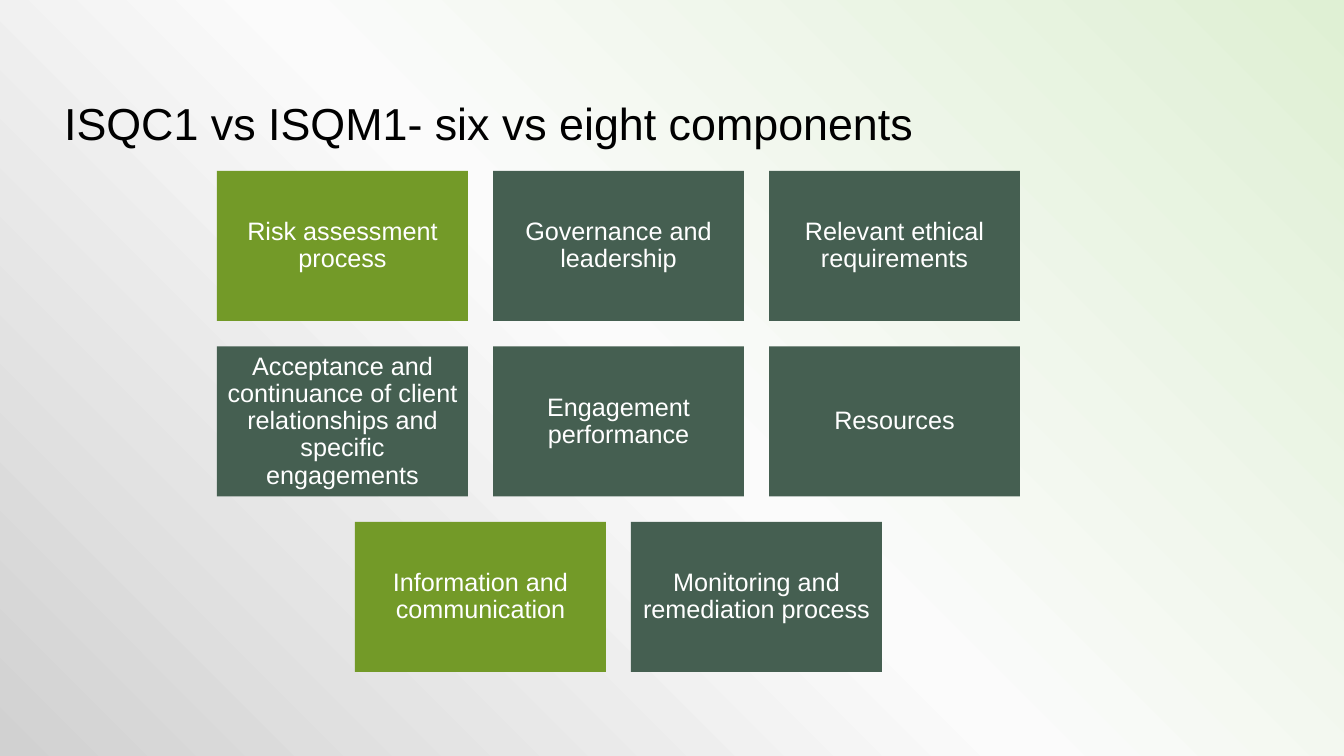
"""Build the slide comparing ISQC1 and ISQM1 components."""
from typing import NamedTuple

from pptx import Presentation
from pptx.dml.color import RGBColor
from pptx.enum.shapes import MSO_SHAPE as Preset
from pptx.enum.text import MSO_ANCHOR as Anchor, MSO_AUTO_SIZE as AutoSize, PP_ALIGN as Align
from pptx.oxml import parse_xml
from pptx.oxml.ns import nsdecls, qn
from pptx.util import Emu, Pt

EMU_PER_PX = 914400 / 100.8
SLIDE_WIDTH, SLIDE_HEIGHT = 1344, 756
TILE_WIDTH, TILE_HEIGHT, GAP = 251, 150, 25
BOARD_LEFT, BOARD_TOP, BOARD_WIDTH, BOARD_HEIGHT = 217, 171, 803, 501
INSET = 7

BLACK = RGBColor(0x00, 0x00, 0x00)
WHITE = RGBColor(0xFF, 0xFF, 0xFF)
LIME = RGBColor(0x73, 0x9A, 0x28)
FOREST = RGBColor(0x45, 0x5F, 0x51)
PALE_GREEN = RGBColor(0xDF, 0xF0, 0xD4)
NEAR_WHITE = RGBColor(0xFB, 0xFB, 0xFB)
GREY = RGBColor(0xD1, 0xD1, 0xD1)


class Tile(NamedTuple):
    text: str
    color: RGBColor = FOREST


class Stop(NamedTuple):
    percent: int
    color: RGBColor
    opacity: int = 100


TILE_ROWS = (
    (
        Tile("Risk assessment process", LIME),
        Tile("Governance and leadership"),
        Tile("Relevant ethical requirements"),
    ),
    (
        Tile("Acceptance and continuance of client relationships and specific engagements"),
        Tile("Engagement performance"),
        Tile("Resources"),
    ),
    (
        Tile("Information and communication", LIME),
        Tile("Monitoring and remediation process"),
    ),
)
STOPS = (Stop(0, PALE_GREEN), Stop(51, NEAR_WHITE, 83), Stop(100, GREY))


def px(length: float) -> Emu:
    return Emu(round(length * EMU_PER_PX))


def write(frame, text: str, *, size: int, color: RGBColor, align: Align, anchor: Anchor) -> None:
    frame.word_wrap = True
    frame.auto_size = AutoSize.NONE
    frame.vertical_anchor = anchor
    para = frame.paragraphs[0]
    para.alignment = align
    para.line_spacing = 0.9
    span = para.add_run()
    span.text = text
    span.font.name = "Arial"
    span.font.size = Pt(size)
    span.font.color.rgb = color


def paint_background(page) -> None:
    page.background.fill.gradient()
    gradient = page.element.find(".//" + qn("a:gradFill"))
    stops = "".join(
        f'<a:gs pos="{stop.percent * 1000}"><a:srgbClr val="{stop.color}">'
        f'<a:alpha val="{stop.opacity * 1000}"/></a:srgbClr></a:gs>'
        for stop in STOPS
    )
    radial = parse_xml(
        f'<a:gradFill {nsdecls("a")} rotWithShape="1"><a:gsLst>{stops}</a:gsLst>'
        '<a:path path="circle"><a:fillToRect l="100000" b="100000"/></a:path></a:gradFill>'
    )
    gradient.getparent().replace(gradient, radial)


def draw_title(page) -> None:
    title = page.shapes.title
    title.left, title.top, title.width, title.height = px(54), px(40), px(1197), px(115)
    write(title.text_frame, "ISQC1 vs ISQM1- six vs eight components",
          size=32, color=BLACK, align=Align.LEFT, anchor=Anchor.BOTTOM)


def draw_tile(page, tile: Tile, left: float, top: float) -> None:
    box = page.shapes.add_shape(Preset.RECTANGLE, px(left), px(top), px(TILE_WIDTH), px(TILE_HEIGHT))
    box.shadow.inherit = False
    box.fill.solid()
    box.fill.fore_color.rgb = tile.color
    box.line.fill.background()
    frame = box.text_frame
    frame.margin_left = frame.margin_right = frame.margin_top = frame.margin_bottom = px(INSET)
    write(frame, tile.text, size=18, color=WHITE, align=Align.CENTER, anchor=Anchor.MIDDLE)


def draw_board(page) -> None:
    column_step = TILE_WIDTH + GAP
    row_step = (BOARD_HEIGHT - TILE_HEIGHT) / (len(TILE_ROWS) - 1)
    for row, tiles in enumerate(TILE_ROWS):
        row_width = len(tiles) * column_step - GAP
        row_left = BOARD_LEFT + (BOARD_WIDTH - row_width) / 2
        for column, tile in enumerate(tiles):
            draw_tile(page, tile, row_left + column * column_step, BOARD_TOP + row * row_step)


def main() -> None:
    deck = Presentation()
    deck.slide_width, deck.slide_height = px(SLIDE_WIDTH), px(SLIDE_HEIGHT)
    page = deck.slides.add_slide(deck.slide_layouts[5])
    paint_background(page)
    draw_title(page)
    draw_board(page)
    deck.save("out.pptx")


if __name__ == "__main__":
    main()
